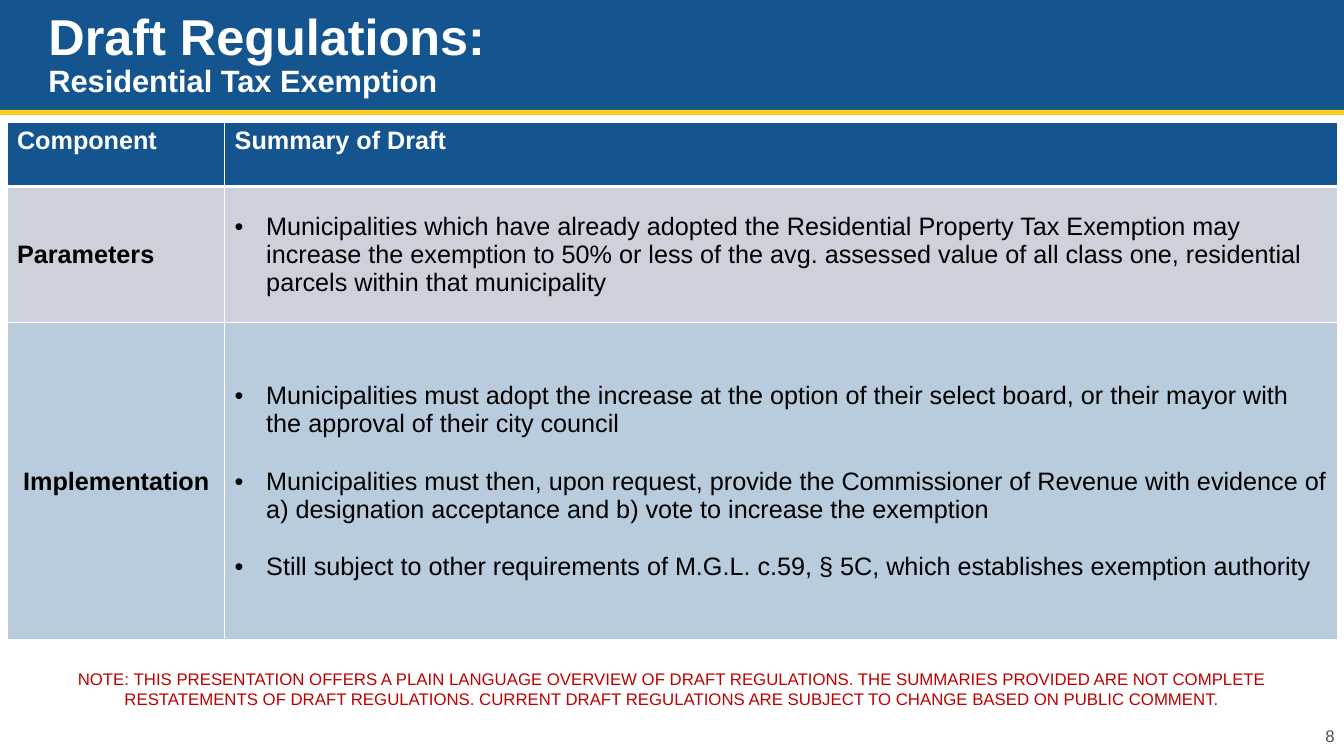
"""Builds the slide on draft regulations for the residential tax exemption."""
from lxml import etree
from pptx import Presentation
from pptx.dml.color import RGBColor
from pptx.enum.shapes import MSO_SHAPE
from pptx.enum.text import MSO_ANCHOR, PP_ALIGN
from pptx.oxml.ns import qn
from pptx.util import Pt

RECT = MSO_SHAPE.RECTANGLE
TOP, MIDDLE = MSO_ANCHOR.TOP, MSO_ANCHOR.MIDDLE
LEFT, CENTER, RIGHT = PP_ALIGN.LEFT, PP_ALIGN.CENTER, PP_ALIGN.RIGHT
HUES = {"blue": "14558F", "gold": "F9CE20", "white": "FFFFFF", "black": "000000",
        "gray": "535353", "red": "C00000", "mist": "CCD1DB", "sky": "B9CCDD"}


def hue(name):
    return RGBColor.from_string(HUES[name])


def write(par, text, size=18, color="black", bold=False, align=LEFT, bullet=False, before=0):
    if bullet:
        props = par._p.get_or_add_pPr()
        props.set("marL", str(Pt(22.5)))
        props.set("indent", str(-Pt(22.5)))
        etree.SubElement(props, qn("a:buFont"), typeface="Arial")
        etree.SubElement(props, qn("a:buChar"), char="•")
    par.alignment = align
    if before:
        par.space_before = Pt(before)
    run = par.add_run()
    run.text = text
    run.font.name = "Arial"
    run.font.size = Pt(size)
    run.font.bold = bold
    run.font.color.rgb = hue(color)


deck = Presentation()
deck.slide_width, deck.slide_height = Pt(960), Pt(540)
slide = deck.slides.add_slide(deck.slide_layouts[5])
shapes = slide.shapes

title = shapes.title
title.left, title.top, title.width, title.height = Pt(27.4), Pt(0), Pt(828), Pt(79.2)
title.text_frame.vertical_anchor = MIDDLE
title.text_frame.word_wrap = True
head = title.text_frame.paragraphs[0]
head.line_spacing = 0.9
write(head, "Draft Regulations:", size=36, color="white", bold=True)
head.add_line_break()
etree.SubElement(head._p[-1], qn("a:rPr"), sz="3600")
write(head, "Residential Tax Exemption", size=22, color="white", bold=True)

for top, height, color in [(0, 79.2, "blue"), (78.5, 3.6, "gold")]:
    bar = shapes.add_shape(RECT, Pt(0), Pt(top), Pt(960), Pt(height))
    bar.shadow.inherit = False
    bar.fill.solid()
    bar.fill.fore_color.rgb = hue(color)
    bar.line.fill.background()
    title.element.addprevious(bar.element)

rows = [
    (46.1, "blue", "Component", ["Summary of Draft"]),
    (97.2, "mist", "Parameters", [
        "Municipalities which have already adopted the Residential Property Tax Exemption "
        "may increase the exemption to 50% or less of the avg. assessed value of all class "
        "one, residential parcels within that municipality"]),
    (226.8, "sky", "Implementation", [
        "Municipalities must adopt the increase at the option of their select board, or "
        "their mayor with the approval of their city council",
        "Municipalities must then, upon request, provide the Commissioner of Revenue with "
        "evidence of a) designation acceptance and b) vote to increase the exemption",
        "Still subject to other requirements of M.G.L. c.59, § 5C, which establishes "
        "exemption authority"]),
]
grid = shapes.add_table(3, 2, Pt(5), Pt(87.1), Pt(950.4), Pt(370.1)).table
grid.columns[0].width, grid.columns[1].width = Pt(155.5), Pt(794.9)
for r, (height, color, label, points) in enumerate(rows):
    grid.rows[r].height = Pt(height)
    for c, lines in enumerate([[label], points]):
        cell = grid.cell(r, c)
        props = cell._tc.get_or_add_tcPr()
        for side in ("lnL", "lnR", "lnT", "lnB"):
            thick = (r, side) in [(0, "lnB"), (1, "lnT")]
            edge = etree.SubElement(props, qn("a:" + side), w=str(Pt(3 if thick else 1)))
            fill = etree.SubElement(edge, qn("a:solidFill"))
            etree.SubElement(fill, qn("a:srgbClr"), val=HUES["white"])
        cell.fill.solid()
        cell.fill.fore_color.rgb = hue(color)
        cell.vertical_anchor = MIDDLE if r else TOP
        for i, line in enumerate(lines):
            par = cell.text_frame.add_paragraph() if i else cell.text_frame.paragraphs[0]
            write(par, line, color="black" if r else "white", bold=r == 0 or c == 0,
                  bullet=r > 0 and c == 1, before=20.7 if i else 0)
grid.cell(2, 0).margin_left = Pt(11.6)

note = ("NOTE:\u00a0THIS PRESENTATION OFFERS A PLAIN LANGUAGE OVERVIEW OF DRAFT REGULATIONS. "
        "THE SUMMARIES PROVIDED ARE NOT COMPLETE RESTATEMENTS OF DRAFT REGULATIONS. CURRENT "
        "DRAFT REGULATIONS ARE\u00a0SUBJECT TO CHANGE BASED ON PUBLIC COMMENT.")
for left, top, width, height, text, color, align in [
        (744.5, 511.2, 216, 28.8, "8", "gray", RIGHT),
        (5, 457.2, 950.4, 69.8, note, "red", CENTER)]:
    box = shapes.add_textbox(Pt(left), Pt(top), Pt(width), Pt(height))
    box.text_frame.word_wrap = True
    box.text_frame.vertical_anchor = MIDDLE
    write(box.text_frame.paragraphs[0], text, size=12, color=color, align=align)

deck.save("out.pptx")
